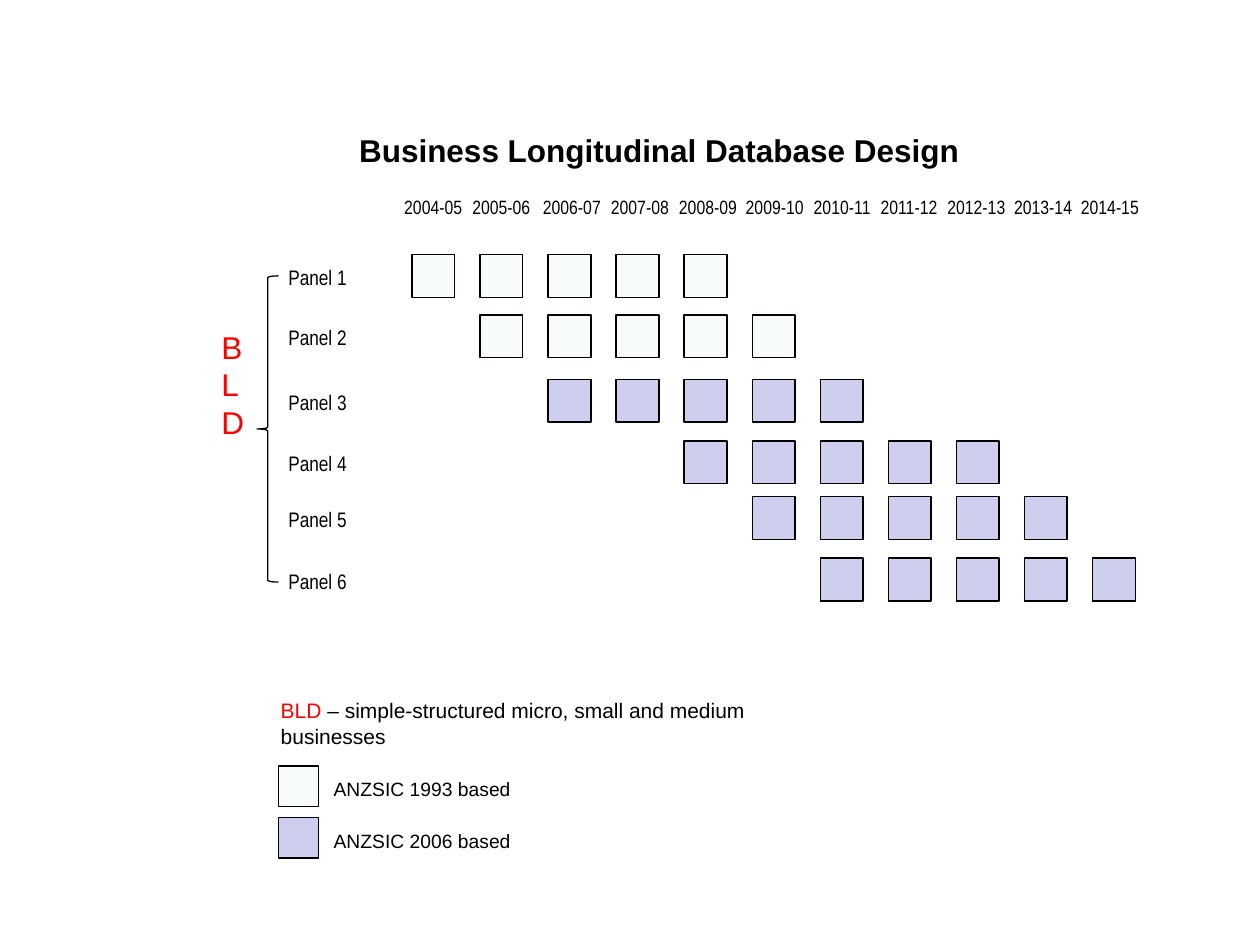
from pptx import Presentation
from pptx.dml.color import RGBColor
from pptx.enum.shapes import MSO_SHAPE
from pptx.enum.text import MSO_ANCHOR, PP_ALIGN
from pptx.util import Inches, Pt

RECT, BRACE = MSO_SHAPE.RECTANGLE, MSO_SHAPE.LEFT_BRACE
TOP, LEFT = MSO_ANCHOR.TOP, PP_ALIGN.LEFT

THEME = {
    "font": "Arial", "narrow": "Arial Narrow",
    "text": "000000", "accent": "FF0000", "paper": "FFFFFF",
    "anzsic93": "F8FBFC", "anzsic06": "CECEEF",
    "title": 18, "body": 12, "small": 11, "line": 0.75,
}

# Content
TITLE = "Business Longitudinal Database Design"
YEARS = [  # label, left edge
    ("2004-05", 3.11), ("2005-06", 3.65), ("2006-07", 4.21), ("2007-08", 4.75),
    ("2008-09", 5.29), ("2009-10", 5.82), ("2010-11", 6.36), ("2011-12", 6.89),
    ("2012-13", 7.42), ("2013-14", 7.95), ("2014-15", 8.48),
]
PANELS = [  # label, first year column, top, fill
    ("Panel 1", 0, 2.02, "anzsic93"),
    ("Panel 2", 1, 2.5, "anzsic93"),
    ("Panel 3", 2, 3.01, "anzsic06"),
    ("Panel 4", 4, 3.5, "anzsic06"),
    ("Panel 5", 5, 3.94, "anzsic06"),
    ("Panel 6", 6, 4.43, "anzsic06"),
]
LEGEND = [("ANZSIC 1993 based", "anzsic93"), ("ANZSIC 2006 based", "anzsic06")]
NOTE = [("BLD", "accent"),
        (" – simple-structured micro, small and medium businesses", "text")]

# Grid
YEARS_PER_PANEL = 5
GRID_LEFT, PITCH, BOX = 3.27, 0.54, 0.34
LEGEND_TOP, LEGEND_PITCH, SWATCH = 6.08, 0.41, 0.32

prs = Presentation()
prs.slide_width, prs.slide_height = Inches(10), Inches(7.5)
s = prs.slides.add_slide(prs.slide_layouts[5])


def rgb(name):
    return RGBColor.from_string(THEME[name])


def add_text(text, x, y, w, h, size="small", font="font", color="text",
             bold=False, wrap=False, vert=None, sp=None):
    """Write a string, or a list of (string, colour) runs, in a box."""
    if sp is None:
        sp = s.shapes.add_textbox(0, 0, 0, 0)
    sp.left, sp.top, sp.width, sp.height = map(Inches, (x, y, w, h))
    tf = sp.text_frame
    tf.word_wrap = wrap
    tf.vertical_anchor = TOP
    if vert:
        tf._txBody.bodyPr.set("vert", vert)
    p = tf.paragraphs[0]
    p.alignment = LEFT
    for part, part_color in [(text, color)] if isinstance(text, str) else text:
        r = p.add_run()
        r.text = part
        r.font.name, r.font.size = THEME[font], Pt(THEME[size])
        r.font.bold = bold
        r.font.color.rgb = rgb(part_color)


def add_shape(kind, x, y, w, h, fill):
    sp = s.shapes.add_shape(kind, *map(Inches, (x, y, w, h)))
    sp.shadow.inherit = False
    sp.fill.solid()
    sp.fill.fore_color.rgb = rgb(fill)
    sp.line.color.rgb = rgb("text")
    sp.line.width = Pt(THEME["line"])


# Title
add_text(TITLE, 2.75, 0.99, 5.01, 0.41, size="title", bold=True,
         sp=s.shapes.title)

# Year headings
for year, x in YEARS:
    add_text(year, x, 1.5, 0.66, 0.29, font="narrow")

# Panels, each followed for five years
for label, first, y, fill in PANELS:
    add_text(label, 2.19, y + 0.03, 0.67, 0.3, size="body", font="narrow")
    for col in range(first, first + YEARS_PER_PANEL):
        add_shape(RECT, GRID_LEFT + col * PITCH, y, BOX, BOX, fill)

# Brace and its stacked label
add_text("BLD", 1.66, 2.55, 0.53, 1.11, size="title", color="accent",
         vert="wordArtVert")
add_shape(BRACE, 2.04, 2.19, 0.17, 2.43, "paper")

# Note and legend
add_text(NOTE, 2.13, 5.49, 4.5, 0.52, size="body", wrap=True)
for i, (label, fill) in enumerate(LEGEND):
    y = LEGEND_TOP + i * LEGEND_PITCH
    add_shape(RECT, 2.21, y, SWATCH, SWATCH, fill)
    add_text(label, 2.55, y + 0.04, 2.36, 0.29, wrap=True)

prs.save("out.pptx")
